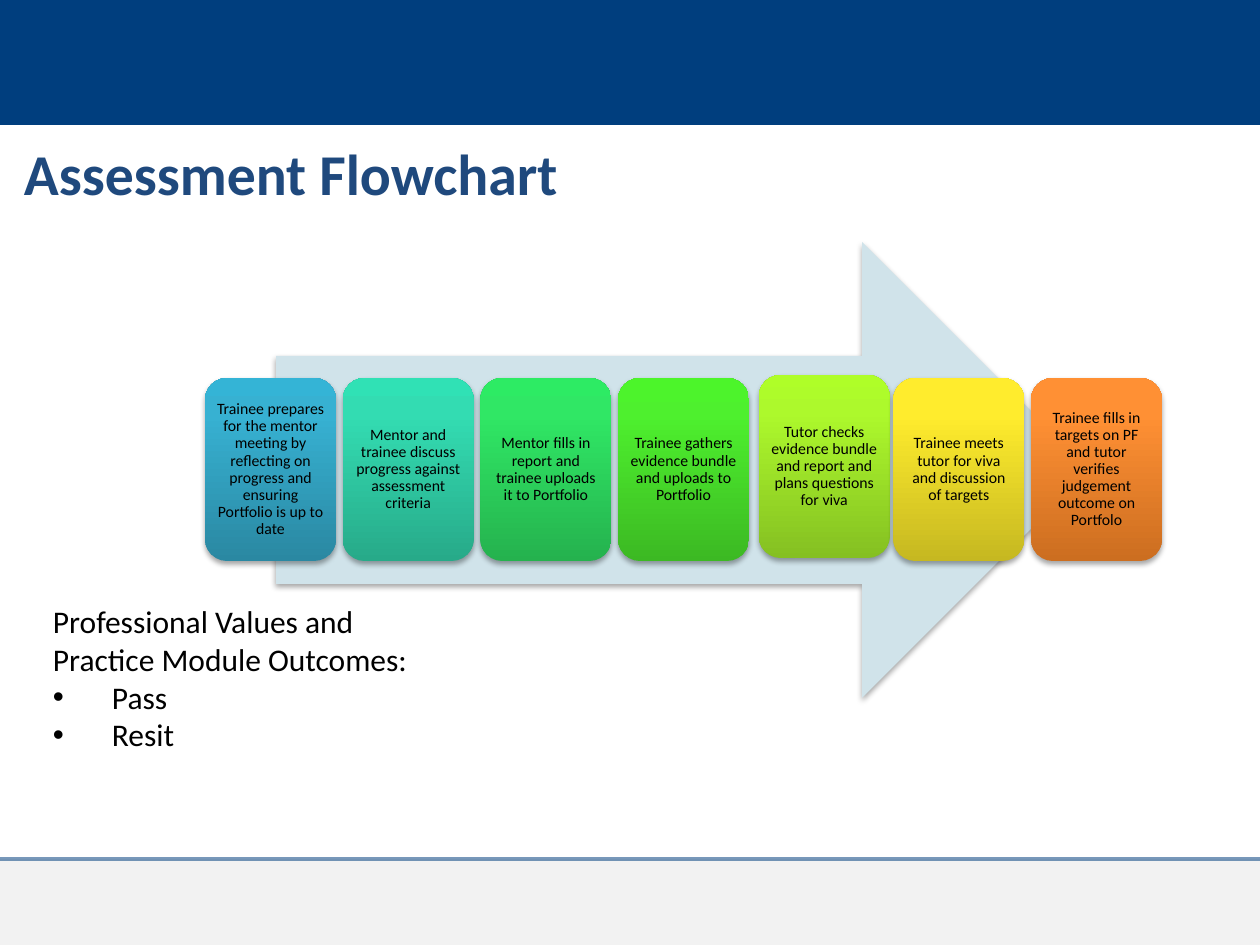
import copy
import pptx
import pptx.util
import pptx.dml.color
import pptx.enum.shapes
import pptx.enum.text
import pptx.oxml
import pptx.oxml.ns

Pt = pptx.util.Pt
SHAPE = pptx.enum.shapes.MSO_SHAPE
ALIGN = pptx.enum.text.PP_ALIGN
ANCHOR = pptx.enum.text.MSO_ANCHOR
NS = pptx.oxml.ns.nsdecls("a")

TITLE = "Assessment Flowchart"
# text, gradient from bottom to top, shift in px from the even row
STEPS = [
    ("Trainee prepares for the mentor meeting by reflecting on progress and "
     "ensuring Portfolio is up to date", ("2A88A2", "37B1D2", "34B4D6"), (0, 0)),
    ("Mentor and trainee discuss progress against assessment criteria",
     ("27AA89", "33DCB2", "30E1B5"), (0, 0)),
    ("Mentor fills in report and trainee uploads it to Portfolio",
     ("25B24E", "30E765", "2DEB64"), (0, 0)),
    ("Trainee gathers evidence bundle and uploads to Portfolio",
     ("3CB923", "4EF02E", "4CF52A"), (0, 0)),
    ("Tutor checks evidence bundle and report and plans questions for viva",
     ("85C022", "ADF92C", "AFFE28"), (3, -3)),
    ("Trainee meets tutor for viva and discussion of targets",
     ("C6B821", "FFEC2D", "FFED2E"), (0, 0)),
    ("Trainee fills in targets on PF and tutor verifies judgement outcome on "
     "Portfolo", ("CC6E20", "FF9034", "FF9136"), (0, 0)),
]
STOPS = (0, 0.8, 1)
OUTCOMES_HEAD = "Professional Values and Practice Module Outcomes:"
OUTCOMES = ["Pass", "Resit"]
COLORS = {"band": "003E7E", "footer": "808080", "arrow": "D0E3EA",
          "title": "1F497D", "text": "000000"}

W, H = 1260, 945
BAND_H, FOOTER_Y = 125, 859
ROW_X, ROW_Y, ROW_W = 205, 378, 957
CARD_W, CARD_H = 131, 183
STEP_X = (ROW_W - CARD_W) / (len(STEPS) - 1)


def px(n):
    return round(n * 914400 / 126)


def rgb(name):
    return pptx.dml.color.RGBColor.from_string(COLORS.get(name, name))


def set_alpha(color_format_parent, percent):
    clr = color_format_parent.find(".//" + pptx.oxml.ns.qn("a:srgbClr"))
    clr.append(pptx.oxml.parse_xml(f'<a:alpha {NS} val="{percent * 1000}"/>'))


def add_shape(s, kind, x, y, w, h, color=None):
    sp = s.shapes.add_shape(kind, px(x), px(y), px(w), px(h))
    sp.shadow.inherit = False
    sp.line.fill.background()
    if color:
        sp.fill.solid()
        sp.fill.fore_color.rgb = rgb(color)
    return sp


def add_shadow(sp):
    effects = sp._element.spPr.find(pptx.oxml.ns.qn("a:effectLst"))
    effects.append(pptx.oxml.parse_xml(
        f'<a:outerShdw {NS} blurRad="{Pt(3.1)}" dist="{Pt(1.8)}" dir="5400000" '
        'rotWithShape="0"><a:srgbClr val="000000"><a:alpha val="35000"/>'
        '</a:srgbClr></a:outerShdw>'))


def fill_gradient(sp, colors):
    sp.fill.gradient()
    sp.fill.gradient_angle = 90
    stops = sp._element.spPr.find(".//" + pptx.oxml.ns.qn("a:gsLst"))
    stops.append(copy.deepcopy(stops[0]))
    for stop, pos, color in zip(sp.fill.gradient_stops, STOPS, colors):
        stop.position = pos
        stop.color.rgb = rgb(color)


def frame(sp, anchor, mx, my):
    tf = sp.text_frame
    tf.word_wrap = True
    tf.vertical_anchor = anchor
    tf.margin_left = tf.margin_right = px(mx)
    tf.margin_top = tf.margin_bottom = px(my)
    return tf


def add_run(p, text, size, color="text", bold=False):
    r = p.add_run()
    r.text = text
    r.font.name = "Calibri"
    r.font.size = Pt(size)
    r.font.bold = bold
    r.font.color.rgb = rgb(color)


def add_bullet(p, indent):
    pPr = p._p.get_or_add_pPr()
    pPr.set("marL", str(px(indent)))
    pPr.set("indent", str(-px(indent)))
    pPr.append(pptx.oxml.parse_xml(f'<a:buFont {NS} typeface="Arial"/>'))
    pPr.append(pptx.oxml.parse_xml(f'<a:buChar {NS} char="•"/>'))


def add_background(s):
    add_shape(s, SHAPE.RECTANGLE, 0, 0, W, BAND_H, "band")
    footer = add_shape(s, SHAPE.RECTANGLE, 0, FOOTER_Y, W, H - FOOTER_Y, "footer")
    set_alpha(footer._element.spPr, 10)
    rule = s.shapes.add_connector(pptx.enum.shapes.MSO_CONNECTOR.STRAIGHT,
                                  0, px(FOOTER_Y), px(W), px(FOOTER_Y))
    rule.line.color.rgb = rgb("band")
    rule.line.width = Pt(2.25)
    set_alpha(rule._element.spPr, 52)
    rule._element.spPr.append(pptx.oxml.parse_xml(f"<a:effectLst {NS}/>"))


def add_flow(s):
    add_shadow(add_shape(s, SHAPE.RIGHT_ARROW, 276, 242, 814, 456, "arrow"))
    for i, (text, colors, (dx, dy)) in enumerate(STEPS):
        card = add_shape(s, SHAPE.ROUNDED_RECTANGLE, ROW_X + i * STEP_X + dx,
                         ROW_Y + dy, CARD_W, CARD_H)
        fill_gradient(card, colors)
        add_shadow(card)
        p = frame(card, ANCHOR.MIDDLE, 5, 5).paragraphs[0]
        p.alignment = ALIGN.CENTER
        p.line_spacing = 0.9
        add_run(p, text, 9)


def add_outcomes(s):
    box = s.shapes.add_textbox(px(40), px(596), px(394), px(165))
    tf = frame(box, ANCHOR.TOP, 13, 6)
    add_run(tf.paragraphs[0], OUTCOMES_HEAD, 18)
    for text in OUTCOMES:
        p = tf.add_paragraph()
        add_bullet(p, 59)
        add_run(p, text, 18)


def add_title(s):
    box = s.shapes.add_textbox(px(15), px(108), px(1086), px(137))
    p = frame(box, ANCHOR.MIDDLE, 9, 5).paragraphs[0]
    p.line_spacing = 0.9
    add_run(p, TITLE, 33, "title", True)


def main():
    prs = pptx.Presentation()
    prs.slide_width, prs.slide_height = px(W), px(H)
    s = prs.slides.add_slide(prs.slide_layouts[6])
    add_background(s)
    add_flow(s)
    add_outcomes(s)
    add_title(s)
    prs.save("out.pptx")


if __name__ == "__main__":
    main()
